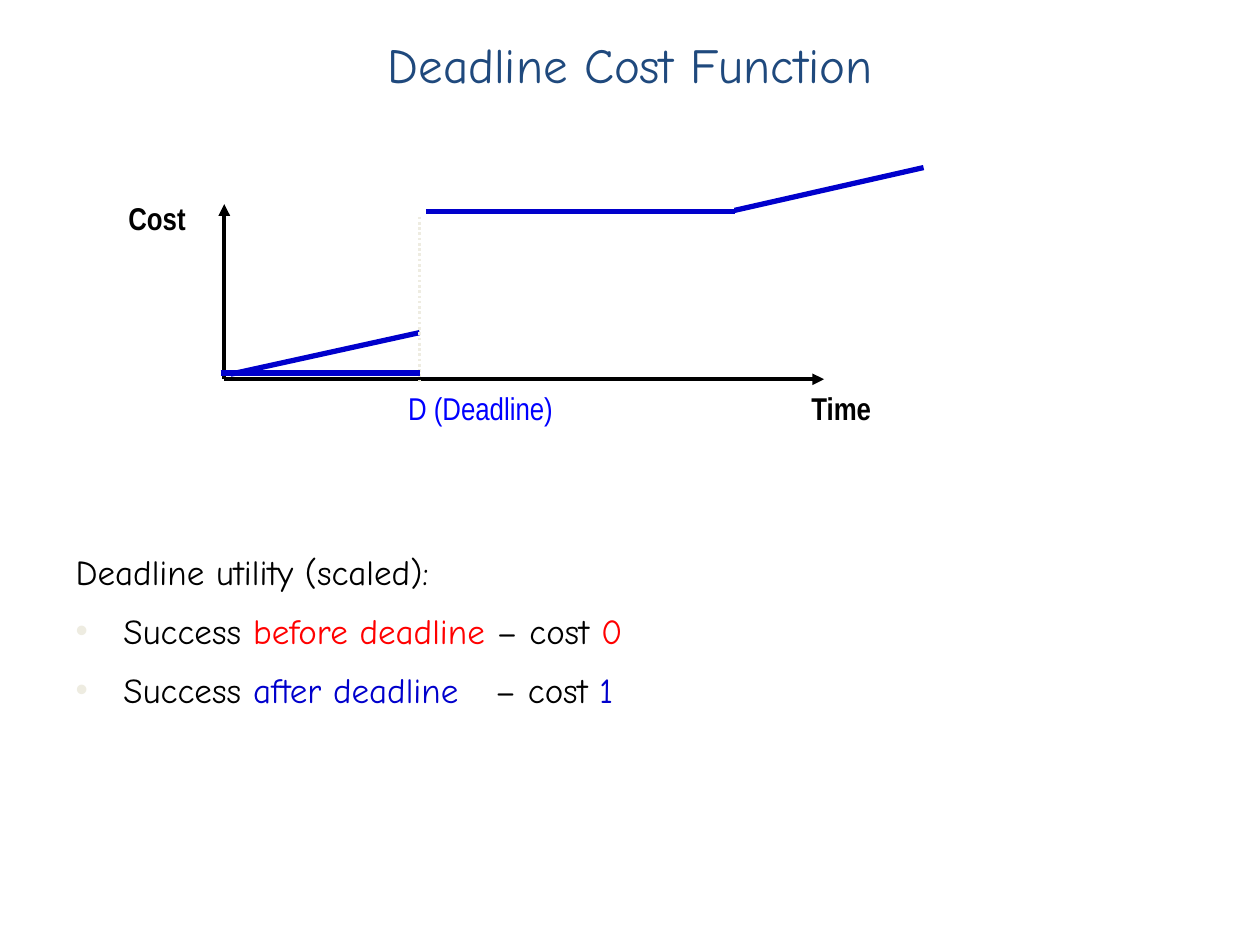
from lxml import etree
from pptx import Presentation
from pptx.dml.color import RGBColor
from pptx.enum.dml import MSO_LINE
from pptx.enum.shapes import MSO_CONNECTOR
from pptx.enum.text import MSO_ANCHOR, MSO_AUTO_SIZE, PP_ALIGN
from pptx.oxml.ns import qn
from pptx.util import Inches, Pt

STRAIGHT = MSO_CONNECTOR.STRAIGHT
DOTS = MSO_LINE.ROUND_DOT
MIDDLE, TOP = MSO_ANCHOR.MIDDLE, MSO_ANCHOR.TOP
CENTER, LEFT = PP_ALIGN.CENTER, PP_ALIGN.LEFT
FIXED = MSO_AUTO_SIZE.NONE

COLORS = {
    "title": "1F497D",
    "text": "000000",
    "curve": "0000CC",
    "label": "0000FF",
    "early": "FF0000",
    "pale": "EEECE1",
}


def add_text(para, text, color="text", size=20, font="Comic Neue", bold=False):
    run = para.add_run()
    run.text = text
    run.font.size = Pt(size)
    run.font.name = font
    run.font.bold = bold
    run.font.color.rgb = RGBColor.from_string(COLORS[color])


def add_tag(node, tag, **attrs):
    return etree.SubElement(node, qn(tag), **attrs)


deck = Presentation()
deck.slide_width, deck.slide_height = Inches(10), Inches(7.5)
slide = deck.slides.add_slide(deck.slide_layouts[1])
shapes = slide.shapes

title, body = shapes.title, slide.placeholders[1]
for holder, top, height, anchor in [(title, 0.17, 0.67, MIDDLE), (body, 4.25, 1.58, TOP)]:
    holder.left, holder.top = Inches(0.5), Inches(top)
    holder.width, holder.height = Inches(9), Inches(height)
    frame = holder.text_frame
    frame.auto_size = FIXED
    frame.word_wrap = True
    frame.vertical_anchor = anchor

head = title.text_frame.paragraphs[0]
head.alignment = CENTER
add_text(head, "Deadline Cost Function", color="title", size=28)

items = [
    [("Deadline utility (scaled):", "text")],
    [("Success ", "text"), ("before deadline", "early"), (" – cost ", "text"), ("0", "early")],
    [("Success ", "text"), ("after deadline", "curve"), ("\t– cost ", "text"), ("1", "curve")],
]
frame = body.text_frame
for i, parts in enumerate(items):
    para = frame.add_paragraph() if i else frame.paragraphs[0]
    para.alignment = LEFT
    para.line_spacing = 1.2
    para.space_before = Pt(5)
    for text, color in parts:
        add_text(para, text, color=color)
    props = para._p.get_or_add_pPr()
    props.set("marL", str(Inches(0.38)))
    props.set("indent", str(Inches(-0.38)))
    if i:
        add_tag(add_tag(props, "a:buClr"), "a:srgbClr", val=COLORS["pale"])
        add_tag(props, "a:buFont", typeface="Arial")
        add_tag(props, "a:buChar", char="•")
        add_tag(add_tag(props, "a:tabLst"), "a:tab", pos=str(Inches(3.33)), algn="l")
    else:
        add_tag(props, "a:buNone")

lines = [
    (1.78, 1.62, 1.78, 3.01, "text", 2.25),
    (6.54, 3.01, 1.78, 3.01, "text", 2.25),
    (1.83, 2.97, 3.33, 2.64, "curve", 3),
    (5.83, 1.67, 7.33, 1.33, "curve", 3),
    (3.33, 1.72, 3.33, 3.03, "pale", 1.5),
    (3.38, 1.68, 5.83, 1.68, "curve", 3),
    (1.75, 2.96, 3.33, 2.96, "curve", 3),
]
for *ends, color, width in lines:
    link = shapes.add_connector(STRAIGHT, *map(Inches, ends))
    link.line.color.rgb = RGBColor.from_string(COLORS[color])
    link.line.width = Pt(width)
    if color == "pale":
        link.line.dash_style = DOTS
    if color == "text":
        add_tag(link.line._get_or_add_ln(), "a:headEnd", type="triangle")
    add_tag(link._element.spPr, "a:effectLst")

labels = [
    ("Cost", 0.92, 1.53, 0.66, "text"),
    ("Time", 6.34, 3.04, 0.68, "text"),
    ("D (Deadline)", 3.14, 3.04, 1.35, "label"),
]
for text, left, top, width, color in labels:
    box = shapes.add_textbox(Inches(left), Inches(top), Inches(width), Inches(0.4))
    box.text_frame.word_wrap = False
    add_text(box.text_frame.paragraphs[0], text, color=color, size=18,
             font="Arial Narrow", bold=color == "text")

deck.save("out.pptx")
